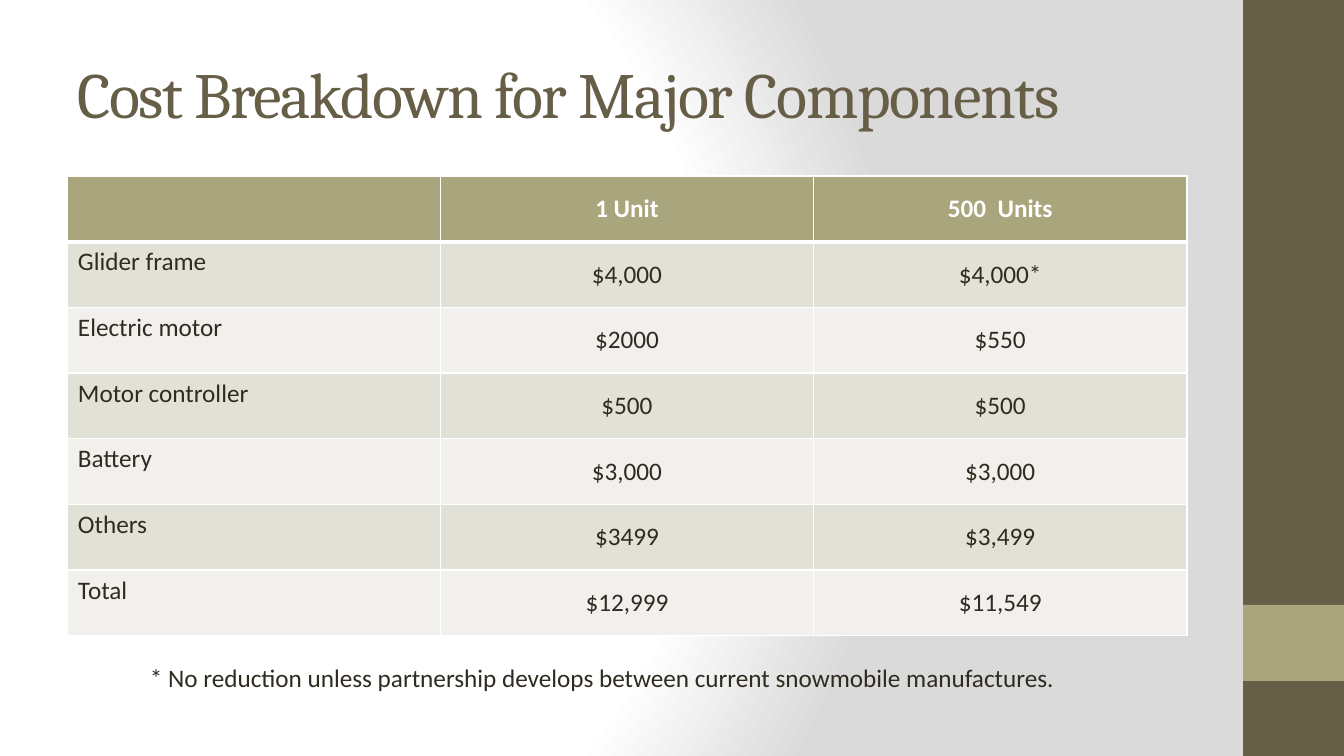
from lxml import etree
from pptx import Presentation
from pptx.dml.color import RGBColor
from pptx.enum.shapes import MSO_SHAPE
from pptx.enum.text import MSO_ANCHOR, MSO_AUTO_SIZE, PP_ALIGN
from pptx.oxml import parse_xml
from pptx.oxml.ns import nsdecls, qn
from pptx.util import Pt

RECT = MSO_SHAPE.RECTANGLE
TOP, MIDDLE = MSO_ANCHOR.TOP, MSO_ANCHOR.MIDDLE
NO_FIT, GROW = MSO_AUTO_SIZE.NONE, MSO_AUTO_SIZE.SHAPE_TO_FIT_TEXT
LEFT, CENTER = PP_ALIGN.LEFT, PP_ALIGN.CENTER

TITLE = "Cost Breakdown for Major Components"
COSTS = [
    ("", "1 Unit", "500  Units"),
    ("Glider frame", "$4,000", "$4,000*"),
    ("Electric motor", "$2000", "$550"),
    ("Motor controller", "$500", "$500"),
    ("Battery", "$3,000", "$3,000"),
    ("Others", "$3499", "$3,499"),
    ("Total", "$12,999", "$11,549"),
]
FOOTNOTE = "* No reduction unless partnership develops between current snowmobile manufactures."

BROWN, OLIVE, INK, WHITE = "675E47", "A9A57C", "2F2B20", "FFFFFF"
BANDS = ("F1F0EC", "E2E1D7")
STOPS = [(0, WHITE), (75, WHITE), (100, "DADADA")]
SIDEBAR = [((1243, 0, 101, 756), BROWN), ((1243, 605, 101, 76), OLIVE)]
TITLE_BOX = (67, 30, 1120, 126)
TABLE_BOX = (67, 176, 1120, 460)
NOTE_BOX = (140, 657, 934, 40)


def px(n):
    return round(n * 914400 / 100.8)


def color(value):
    return RGBColor.from_string(value)


def put_text(tf, text, size=18, font="Calibri", fill=INK, bold=False,
             align=LEFT, spacing=None):
    p = tf.paragraphs[0]
    p.alignment = align
    r = p.add_run()
    r.text = text
    r.font.size = Pt(size)
    r.font.name = font
    r.font.bold = bold
    r.font.color.rgb = color(fill)
    if spacing is not None:
        r.font._element.set("spc", str(spacing * 100))


def set_background(s):
    stops = "".join(
        f'<a:gs pos="{pos * 1000}"><a:srgbClr val="{value}"/></a:gs>'
        for pos, value in STOPS)
    s.element.cSld.insert(0, parse_xml(
        f'<p:bg {nsdecls("p", "a")}><p:bgPr><a:gradFill rotWithShape="1">'
        f'<a:gsLst>{stops}</a:gsLst><a:path path="circle">'
        '<a:fillToRect l="20000" t="50000" r="100000" b="50000"/></a:path>'
        '</a:gradFill><a:effectLst/></p:bgPr></p:bg>'))


def set_borders(cell, widths):
    tc_pr = cell._tc.get_or_add_tcPr()
    for i, (side, width) in enumerate(widths.items()):
        ln = etree.Element(qn(f"a:ln{side}"), w=str(Pt(width)))
        fill = etree.SubElement(ln, qn("a:solidFill"))
        etree.SubElement(fill, qn("a:srgbClr"), val=WHITE)
        tc_pr.insert(i, ln)


def add_costs(s):
    n_rows, n_cols = len(COSTS), len(COSTS[0])
    table = s.shapes.add_table(n_rows, n_cols, *map(px, TABLE_BOX)).table
    for col in table.columns:
        col.width = px(TABLE_BOX[2] / n_cols)
    for i, values in enumerate(COSTS):
        table.rows[i].height = px(TABLE_BOX[3] / n_rows)
        header = i == 0
        for j, value in enumerate(values):
            cell = table.cell(i, j)
            cell.margin_left = cell.margin_right = px(11)
            cell.margin_top = cell.margin_bottom = px(5)
            cell.vertical_anchor = MIDDLE if j else TOP
            cell.fill.solid()
            cell.fill.fore_color.rgb = color(OLIVE if header else BANDS[i % 2])
            set_borders(cell, {"L": 1, "R": 1, "T": 3 if i == 1 else 1,
                               "B": 3 if header else 1})
            if value:
                put_text(cell.text_frame, value, bold=header,
                         fill=WHITE if header else INK,
                         align=CENTER if j else LEFT)


def main():
    prs = Presentation()
    prs.slide_width, prs.slide_height = px(1344), px(756)
    s = prs.slides.add_slide(prs.slide_layouts[5])
    set_background(s)

    for box, fill in SIDEBAR:
        sp = s.shapes.add_shape(RECT, *map(px, box))
        sp.shadow.inherit = False
        sp.fill.solid()
        sp.fill.fore_color.rgb = color(fill)
        sp.line.fill.background()

    title = s.shapes.title
    title.left, title.top, title.width, title.height = map(px, TITLE_BOX)
    tf = title.text_frame
    tf.auto_size = NO_FIT
    tf.vertical_anchor = MIDDLE
    put_text(tf, TITLE, size=46, font="Cambria", fill=BROWN, spacing=-1)

    add_costs(s)

    tf = s.shapes.add_textbox(*map(px, NOTE_BOX)).text_frame
    tf.word_wrap = False
    tf.auto_size = GROW
    put_text(tf, FOOTNOTE)

    prs.save("out.pptx")


if __name__ == "__main__":
    main()
